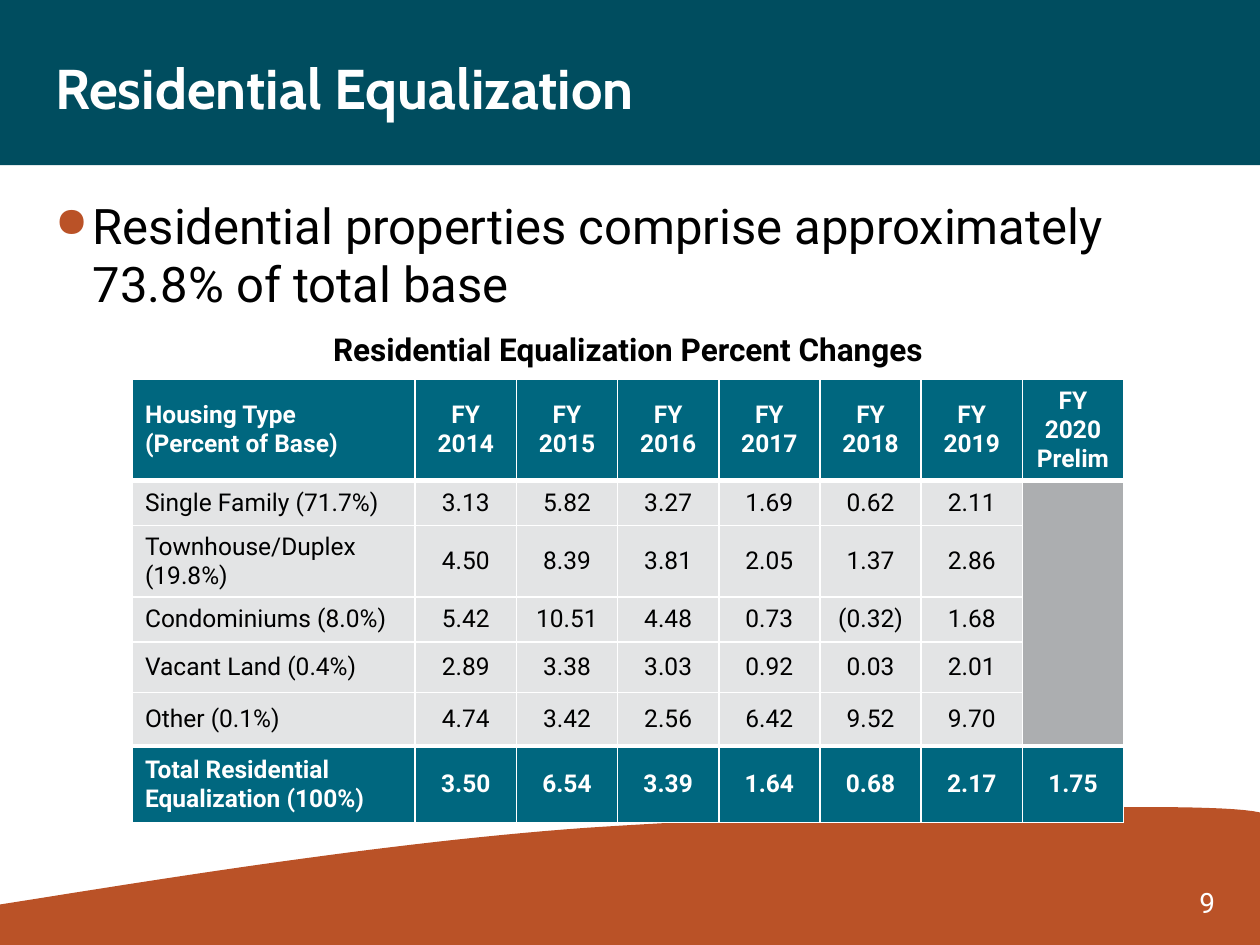
"""Build the residential equalization slide with its percent change table."""
from lxml import etree
from pptx import Presentation
from pptx.dml.color import RGBColor
from pptx.enum.shapes import MSO_SHAPE
from pptx.enum.text import MSO_ANCHOR, PP_ALIGN
from pptx.oxml.ns import qn
from pptx.util import Cm, Pt

RECTANGLE = MSO_SHAPE.RECTANGLE
TOP, MIDDLE = MSO_ANCHOR.TOP, MSO_ANCHOR.MIDDLE
LEFT, CENTER = PP_ALIGN.LEFT, PP_ALIGN.CENTER

WHITE = RGBColor(0xFF, 0xFF, 0xFF)
BLACK = RGBColor(0x00, 0x00, 0x00)
DARK_TEAL = RGBColor(0x00, 0x4D, 0x5F)
TEAL = RGBColor(0x00, 0x67, 0x7F)
RUST = RGBColor(0xBA, 0x52, 0x27)
PALE_GRAY = RGBColor(0xE3, 0xE4, 0xE5)
MID_GRAY = RGBColor(0xAC, 0xAE, 0xB0)
HEADING_FONT, BODY_FONT = "Cabin", "Roboto"

TITLE = "Residential Equalization"
BULLET = "Residential properties comprise approximately 73.8% of total base"
CAPTION = "Residential Equalization Percent Changes"
PAGE_NUMBER = "9"
HEADER = [["Housing Type", "(Percent of Base)"]]
HEADER += [[f"FY {year}"] for year in range(2014, 2020)]
HEADER += [["FY 2020", "Prelim"]]
HOUSING = [
    ("Single Family (71.7%)", "3.13", "5.82", "3.27", "1.69", "0.62", "2.11"),
    ("Townhouse/Duplex (19.8%)", "4.50", "8.39", "3.81", "2.05", "1.37", "2.86"),
    ("Condominiums (8.0%)", "5.42", "10.51", "4.48", "0.73", "(0.32)", "1.68"),
    ("Vacant Land (0.4%)", "2.89", "3.38", "3.03", "0.92", "0.03", "2.01"),
    ("Other (0.1%)", "4.74", "3.42", "2.56", "6.42", "9.52", "9.70"),
]
TOTAL = ("Total Residential\nEqualization (100%)",
         "3.50", "6.54", "3.39", "1.64", "0.68", "2.17", "1.75")

SLIDE_WIDTH, SLIDE_HEIGHT = 25.4, 19.05
MARGIN, CONTENT_WIDTH = 0.86, 23.6
TABLE_LEFT, TABLE_TOP = 2.67, 7.65
COLUMN_WIDTHS = [5.7] + [2.04] * 7
ROW_HEIGHTS = [1.55, 0.91, 0.91, 0.91, 1.02, 1.07, 1.55]
HILL_CURVES = [
    ((25.4, 16.38), (24.26, 16.1), (16.05, 16.41), (11.81, 16.69)),
    ((11.81, 16.69), (7.59, 16.99), (2.57, 17.83), (-0.03, 18.24)),
]
CURVE_STEPS = 30


def curve_points(start, control_1, control_2, end):
    points = []
    for step in range(CURVE_STEPS + 1):
        t = step / CURVE_STEPS
        weights = ((1 - t) ** 3, 3 * t * (1 - t) ** 2, 3 * t * t * (1 - t), t ** 3)
        corners = (start, control_1, control_2, end)
        points.append(tuple(
            Cm(sum(w * corner[axis] for w, corner in zip(weights, corners)))
            for axis in (0, 1)))
    return points


def paint(shape, color):
    shape.shadow.inherit = False
    shape.fill.solid()
    shape.fill.fore_color.rgb = color
    shape.line.fill.background()


def write(frame, lines, size, color, bold=False, align=LEFT, font=BODY_FONT):
    frame.word_wrap = True
    for index, line in enumerate(lines):
        paragraph = frame.paragraphs[0] if index == 0 else frame.add_paragraph()
        paragraph.alignment = align
        for part_index, part in enumerate(line.split("\n")):
            if part_index:
                paragraph.add_line_break()
            run = paragraph.add_run()
            run.text = part
            run.font.name = font
            run.font.size = Pt(size)
            run.font.bold = bold
            run.font.color.rgb = color


def add_text(slide, box, text, size, color, anchor=TOP, **style):
    frame = slide.shapes.add_textbox(*map(Cm, box)).text_frame
    frame.vertical_anchor = anchor
    write(frame, [text], size, color, **style)
    return frame


def add_bullet(paragraph):
    properties = paragraph._p.get_or_add_pPr()
    properties.set("marL", str(Cm(0.76)))
    properties.set("indent", str(-Cm(0.76)))
    color = etree.SubElement(properties, qn("a:buClr"))
    etree.SubElement(color, qn("a:srgbClr"), val=str(RUST))
    etree.SubElement(properties, qn("a:buSzPct"), val="85000")
    etree.SubElement(properties, qn("a:buChar"), char="●")


def style_cell(cell, fill, top, bottom):
    properties = cell._tc.get_or_add_tcPr()
    for side, width in (("L", 1), ("R", 1), ("T", top), ("B", bottom)):
        border = etree.SubElement(properties, qn(f"a:ln{side}"), w=str(Pt(width)))
        solid = etree.SubElement(border, qn("a:solidFill"))
        etree.SubElement(solid, qn("a:srgbClr"), val=str(WHITE))
    cell.fill.solid()
    cell.fill.fore_color.rgb = fill
    cell.vertical_anchor = MIDDLE


def add_equalization_table(slide):
    rows = [HEADER]
    rows += [[[text] for text in row] + [[]] for row in HOUSING]
    rows += [[[text] for text in TOTAL]]
    last = len(rows) - 1
    table = slide.shapes.add_table(
        len(rows), len(COLUMN_WIDTHS), Cm(TABLE_LEFT), Cm(TABLE_TOP),
        Cm(sum(COLUMN_WIDTHS)), Cm(sum(ROW_HEIGHTS))).table
    table.horz_banding = False
    for column, width in zip(table.columns, COLUMN_WIDTHS):
        column.width = Cm(width)
    for row_index, row in enumerate(rows):
        table.rows[row_index].height = Cm(ROW_HEIGHTS[row_index])
        strong = row_index in (0, last)
        top = 3 if row_index in (1, last) else 1
        bottom = 3 if row_index in (0, last - 1) else 1
        for column_index, lines in enumerate(row):
            cell = table.cell(row_index, column_index)
            fill = TEAL if strong else PALE_GRAY if lines else MID_GRAY
            style_cell(cell, fill, top, bottom)
            if lines:
                write(cell.text_frame, lines, 14, WHITE if strong else BLACK,
                      bold=strong, align=CENTER if column_index else LEFT)
            else:
                cell.text_frame.paragraphs[0].font.size = Pt(14)
    final_column = len(COLUMN_WIDTHS) - 1
    table.cell(1, final_column).merge(table.cell(last - 1, final_column))


def main():
    presentation = Presentation()
    presentation.slide_width = Cm(SLIDE_WIDTH)
    presentation.slide_height = Cm(SLIDE_HEIGHT)
    slide = presentation.slides.add_slide(presentation.slide_layouts[6])

    builder = slide.shapes.build_freeform(0, Cm(SLIDE_HEIGHT))
    outline = [(Cm(SLIDE_WIDTH), Cm(SLIDE_HEIGHT))]
    for curve in HILL_CURVES:
        outline += curve_points(*curve)
    builder.add_line_segments(outline, close=True)
    paint(builder.convert_to_shape(), RUST)
    banner = slide.shapes.add_shape(RECTANGLE, 0, 0, Cm(SLIDE_WIDTH), Cm(3.33))
    paint(banner, DARK_TEAL)

    number = add_text(slide, (23.7, 17.78, 1.27, 0.84), PAGE_NUMBER, 16, WHITE,
                      anchor=MIDDLE, align=CENTER)
    number.margin_left = number.margin_right = Cm(0.13)
    body = add_text(slide, (MARGIN, 3.81, CONTENT_WIDTH, 13.16), BULLET, 28, BLACK)
    add_bullet(body.paragraphs[0])
    add_text(slide, (MARGIN, 0.53, CONTENT_WIDTH, 2.44), TITLE, 32, WHITE,
             anchor=MIDDLE, bold=True, font=HEADING_FONT)
    add_text(slide, (TABLE_LEFT, 6.53, sum(COLUMN_WIDTHS), 1.02), CAPTION, 18, BLACK,
             bold=True, align=CENTER)
    add_equalization_table(slide)
    presentation.save("out.pptx")


if __name__ == "__main__":
    main()
